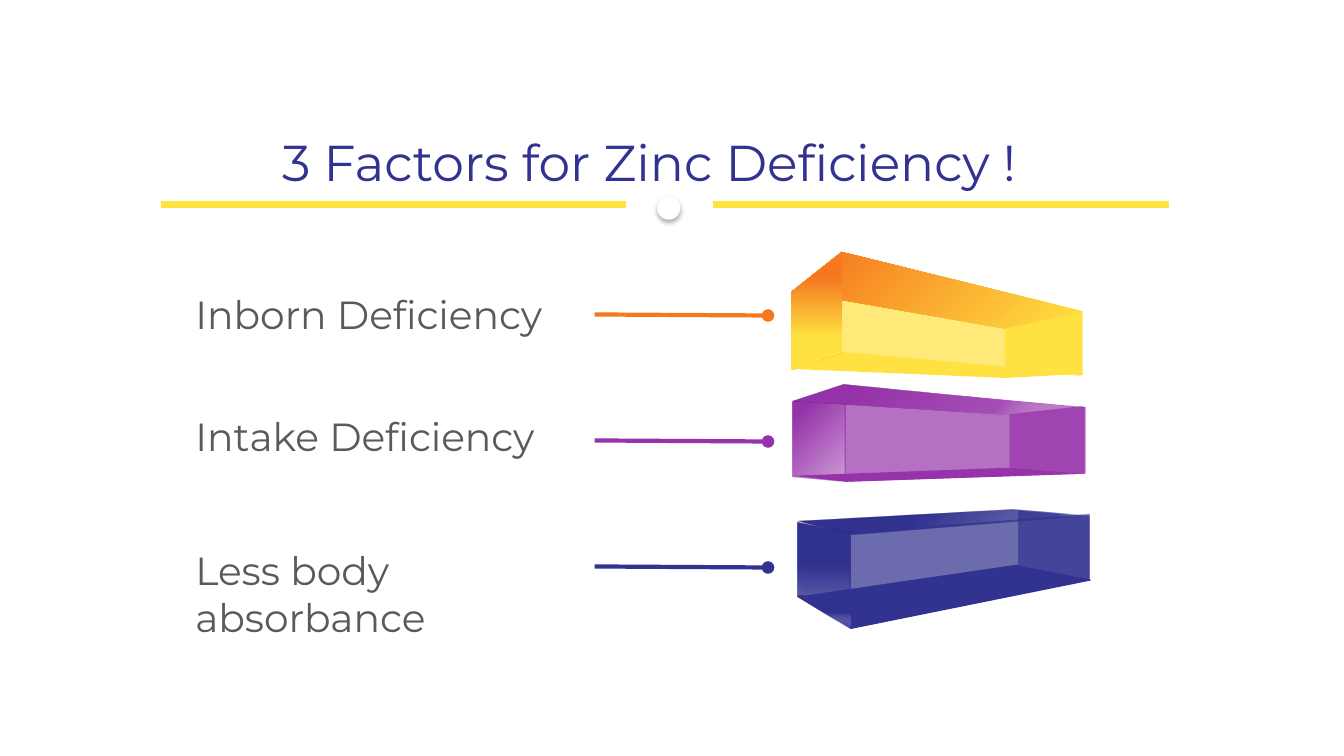
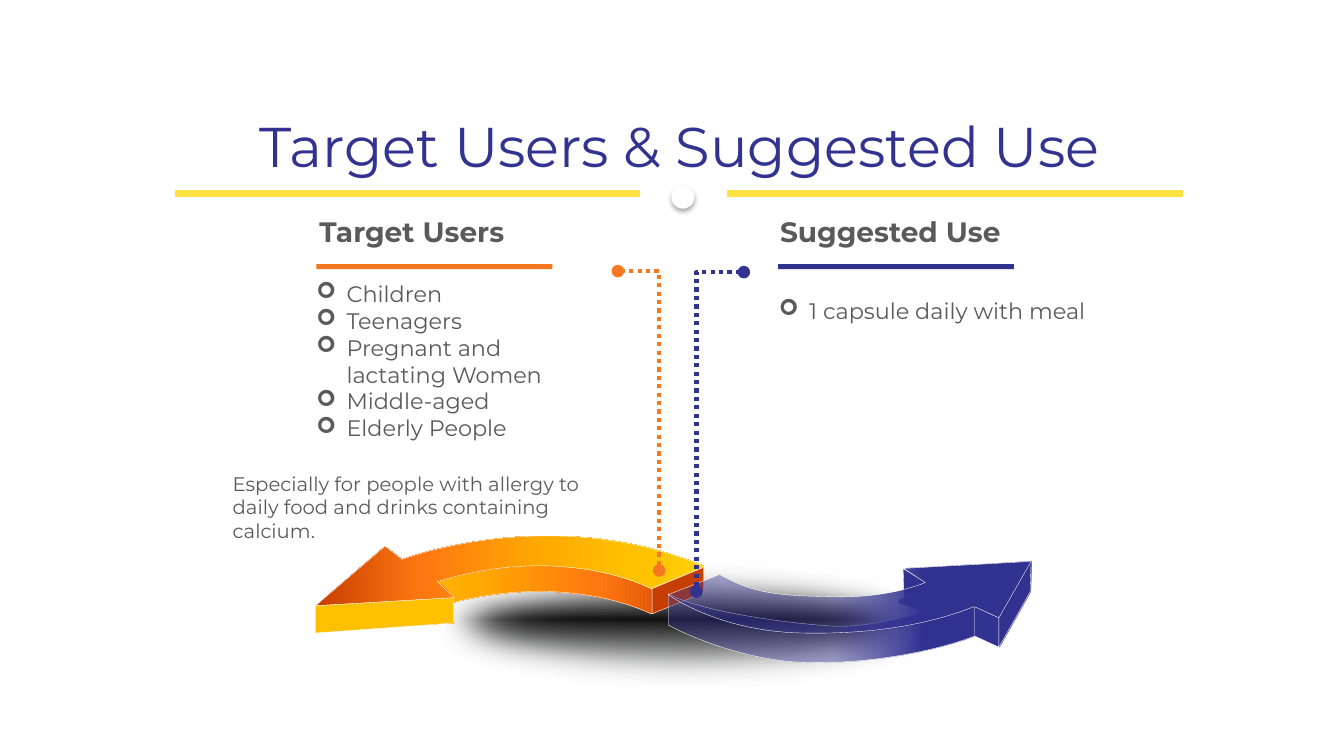
from dataclasses import dataclass
from itertools import pairwise

from pptx import Presentation
from pptx.dml.color import RGBColor
from pptx.enum.dml import MSO_LINE
from pptx.enum.shapes import MSO_CONNECTOR, MSO_SHAPE
from pptx.enum.text import MSO_AUTO_SIZE, PP_ALIGN
from pptx.oxml import parse_xml
from pptx.oxml.ns import nsdecls, qn
from pptx.oxml.xmlchemy import OxmlElement as new_element
from pptx.util import Inches, Pt

COLORS = {
    "yellow": "FFE241", "navy": "323291", "orange": "F57820", "purple": "9632AA",
    "text": "5A5A5A", "white": "FFFFFF", "pale": "F2F2F2", "black": "000000",
    "edge": "020202", "ink": "121212", "slate": "535455", "rust": "C73E01",
    "flame": "FF7711", "amber": "FFAA01", "gold": "FFC000", "lemon": "FECE02",
}


@dataclass
class Gradient:
    """Stops are (percent, colour, opacity percent)."""
    stops: list
    angle: int = 0
    kind: str = ""
    focus: tuple = (50, 50, 50, 50)


def color_xml(name, opacity=100):
    return (f'<a:srgbClr val="{COLORS[name]}">'
            f'<a:alpha val="{opacity * 1000}"/></a:srgbClr>')


def fill_xml(fill):
    if not isinstance(fill, Gradient):
        return f'<a:solidFill {nsdecls("a")}>{color_xml(*fill)}</a:solidFill>'
    stops = "".join(f'<a:gs pos="{place * 1000}">{color_xml(*color)}</a:gs>'
                    for place, *color in fill.stops)
    if fill.kind:
        sides = " ".join(f'{side}="{value * 1000}"'
                         for side, value in zip("ltrb", fill.focus))
        course = f'<a:path path="{fill.kind}"><a:fillToRect {sides}/></a:path>'
    else:
        course = f'<a:lin ang="{fill.angle * 60000}" scaled="0"/>'
    return (f'<a:gradFill {nsdecls("a")} rotWithShape="1">'
            f'<a:gsLst>{stops}</a:gsLst>{course}</a:gradFill>')


def flatten(points, steps=16):
    """Sample six-number points (cubic curves) to find the true extent."""
    result = [points[0]]
    for before, point in pairwise(points):
        if len(point) == 2:
            result.append(point)
            continue
        corners = [before[-2:], point[:2], point[2:4], point[4:]]
        for step in range(1, steps + 1):
            t = step / steps
            weights = ((1 - t) ** 3, 3 * t * (1 - t) ** 2, 3 * t * t * (1 - t), t ** 3)
            result.append(tuple(sum(weight * corner[axis]
                                    for weight, corner in zip(weights, corners))
                                for axis in (0, 1)))
    return result


def restore_curves(shape, points):
    """Write the outline of a sampled shape with real cubic curves."""
    outline = shape._element.spPr.find(".//" + qn("a:path"))
    for segment in list(outline)[1:-1]:
        outline.remove(segment)
    for index, point in enumerate(points[1:], start=1):
        segment = new_element("a:lnTo" if len(point) == 2 else "a:cubicBezTo")
        for x, y in zip(point[::2], point[1::2]):
            corner = new_element("a:pt")
            corner.set("x", str(Inches(x) - shape.left))
            corner.set("y", str(Inches(y) - shape.top))
            segment.append(corner)
        outline.insert(index, segment)


class Deck:
    FONT = "Montserrat"
    FRAME = {"word_wrap": True, "auto_size": MSO_AUTO_SIZE.SHAPE_TO_FIT_TEXT}
    INDENT = Inches(0.3)

    def __init__(self):
        self.presentation = Presentation()
        self.presentation.slide_width = Inches(7.5 * 16 / 9)
        self.presentation.slide_height = Inches(7.5)
        self.slide = None

    def new_slide(self):
        self.slide = self.presentation.slides.add_slide(self.presentation.slide_layouts[6])

    def style_line(self, line, color, width, ends=(), dash=None):
        line.color.rgb = RGBColor.from_string(COLORS[color])
        line.width = Pt(width)
        if dash:
            line.dash_style = dash
        for end in ends:
            tip = new_element(f"a:{end}")
            tip.set("type", "oval")
            line._get_or_add_ln().append(tip)

    def style_shape(self, shape, fill=None, line=None, shadow=None, soft_edge=0):
        shape.shadow.inherit = False
        properties = shape._element.spPr
        if fill:
            shape.fill.solid()
            properties.replace(properties.find(qn("a:solidFill")),
                               parse_xml(fill_xml(fill)))
        else:
            shape.fill.background()
        if line:
            self.style_line(shape.line, **line)
        else:
            shape.line.fill.background()
        effects = properties.find(qn("a:effectLst"))
        if shadow:
            color, opacity, blur, distance, angle = shadow
            effects.append(parse_xml(
                f'<a:outerShdw {nsdecls("a")} blurRad="{Pt(blur)}" dist="{Pt(distance)}" '
                f'dir="{angle * 60000}" algn="ctr" rotWithShape="0">'
                f'{color_xml(color, opacity)}</a:outerShdw>'))
        if soft_edge:
            effects.append(parse_xml(
                f'<a:softEdge {nsdecls("a")} rad="{Pt(soft_edge)}"/>'))

    def preset(self, kind, box, **style):
        shape = self.slide.shapes.add_shape(kind, *map(Inches, box))
        self.style_shape(shape, **style)

    def outline(self, points, close=True, **style):
        start, *rest = [(Inches(x), Inches(y)) for x, y in flatten(points)]
        builder = self.slide.shapes.build_freeform(*start, scale=1.0)
        builder.add_line_segments(rest, close=close)
        shape = builder.convert_to_shape()
        if any(len(point) == 6 for point in points):
            restore_curves(shape, points)
        self.style_shape(shape, **style)

    def line(self, start, end, color, width, ends=()):
        connector = self.slide.shapes.add_connector(
            MSO_CONNECTOR.STRAIGHT, *map(Inches, (*start, *end)))
        self.style_line(connector.line, color, width, ends)
        connector._element.spPr.append(new_element("a:effectLst"))

    def text(self, box, lines, size, color="text", bold=False, align=PP_ALIGN.LEFT,
             bullet=None):
        frame = self.slide.shapes.add_textbox(*map(Inches, box)).text_frame
        for name, value in self.FRAME.items():
            setattr(frame, name, value)
        font_format = {"name": self.FONT, "size": Pt(size), "bold": bold}
        for index, line in enumerate(lines):
            paragraph = frame.add_paragraph() if index else frame.paragraphs[0]
            paragraph.alignment = align
            if bullet:
                properties = paragraph._p.get_or_add_pPr()
                properties.set("marL", str(self.INDENT))
                properties.set("indent", str(-self.INDENT))
                for tag, key, value in (("a:buFont", "typeface", "Wingdings"),
                                        ("a:buChar", "char", bullet)):
                    mark = new_element(tag)
                    mark.set(key, value)
                    properties.append(mark)
            run = paragraph.add_run()
            run.text = line
            for name, value in font_format.items():
                setattr(run.font, name, value)
            run.font.color.rgb = RGBColor.from_string(COLORS[color])

    def header(self, title, box, size, left, top, align=PP_ALIGN.LEFT):
        """Title over a yellow rule that is broken by a white ball."""
        for start, end in ((0, 4.61), (5.47, 10)):
            self.line((left + start, top), (left + end, top), "yellow", 4.5)
        self.preset(MSO_SHAPE.OVAL, (left + 4.92, top - 0.08, 0.23, 0.23),
                    fill=("white",), shadow=("black", 32, 3.5, 2.2, 90))
        self.text(box, [title], size, "navy", align=align)

    def faces(self, faces, **style):
        for fill, points in faces:
            self.outline(points, fill=fill, **style)


def fading(color, solid, thin, opacity, angle):
    return Gradient([(solid, color), (thin, color, opacity), (100, "white", 0)], angle)


def factors_slide(deck):
    deck.new_slide()
    deck.header("3 Factors for Zinc Deficiency !", (2.7, 1.25, 8.52, 0.71), 36, 1.6, 2.03)

    # Navy, purple and yellow glass boxes, faces from back to front
    deck.faces([
        (("navy",), [(10.05, 5.6), (7.91, 5.91), (7.91, 5.92), (8.44, 6.24),
                     (10.82, 5.76), (10.82, 5.75)]),
        (("navy", 70), [(10.81, 5.75), (10.81, 5.12), (10.03, 5.06), (10.03, 5.6)]),
        (("pale",), [(10.1, 5.6), (10.1, 5.06), (7.97, 5.18), (7.97, 5.91)]),
        (fading("navy", 39, 84, 70, 45),
         [(10.05, 5.06), (7.91, 5.17), (8.44, 5.3), (10.82, 5.12)]),
        (("navy", 70), [(8.43, 6.24), (10.81, 5.75), (10.81, 5.1), (8.43, 5.28)]),
        (fading("navy", 39, 84, 70, 90),
         [(7.91, 5.18), (7.91, 5.92), (8.44, 6.25), (8.44, 5.29)]),
    ])
    deck.faces([
        (fading("purple", 21, 93, 52, 45),
         [(8.38, 3.83), (7.86, 3.99), (7.86, 4.73), (8.39, 4.78), (8.39, 3.83)]),
        (("purple", 70), [(10.76, 4.04), (8.38, 3.82), (8.38, 4.78), (10.76, 4.7)]),
        (fading("purple", 20, 72, 52, 45),
         [(10.01, 4.11), (10.71, 4.04), (8.37, 3.82), (7.86, 3.98), (10, 4.11)]),
        (("purple", 70), [(10.77, 4.04), (10.73, 4.03), (10.02, 4.11), (10.02, 4.64),
                          (10.76, 4.7), (10.77, 4.7)]),
        (("edge",), [(10.02, 4.64), (10.02, 4.64), (10.02, 4.11)]),
        (("purple",), [(7.87, 4.72), (8.39, 4.78), (10.76, 4.7), (10.02, 4.64)]),
    ])
    deck.faces([
        (("yellow", 70), [(8.32, 2.53), (8.32, 3.51), (10.72, 3.73), (10.72, 3.12)]),
        (Gradient([(0, "yellow"), (7, "orange"), (100, "yellow")],
                  kind="circle", focus=(0, 0, 100, 100)),
         [(9.98, 3.26), (10.74, 3.1), (10.74, 3.09), (8.35, 2.5), (7.86, 2.89),
          (9.97, 3.26)]),
        (("yellow",), [(10.74, 3.1), (9.97, 3.26), (9.97, 3.64), (10.74, 3.72)]),
        (("yellow",), [(7.85, 3.66), (8.35, 3.49), (9.99, 3.64), (10.72, 3.71),
                       (9.98, 3.75)]),
        (Gradient([(20, "orange"), (72, "yellow"), (100, "yellow")], 90),
         [(7.85, 2.9), (7.85, 3.67), (8.35, 3.5), (8.35, 2.52)]),
    ])

    # Labels and their pointers
    factors = [("Inborn Deficiency", 2.83, 0.57, "orange"),
               ("Intake Deficiency", 4.04, 0.57, "purple"),
               ("Less body absorbance", 5.37, 1.04, "navy")]
    for row, (label, top, height, color) in enumerate(factors):
        deck.text((1.84, top, 4.06, height), [label], 28)
        level = 3.12 + 1.25 * row
        deck.line((5.9, level), (7.62, level + 0.01), color, 3, ["tailEnd"])


def users_slide(deck):
    deck.new_slide()
    deck.header("Target Users & Suggested Use", (1.74, 1.06, 10, 0.77), 40, 1.74, 1.92,
                PP_ALIGN.CENTER)

    # Ground shadow
    deck.preset(MSO_SHAPE.OVAL, (3.87, 5.43, 5.71, 1.42),
                fill=Gradient([(0, "ink"), (100, "white", 0)], kind="shape"),
                shadow=("slate", 100, 0, 8.5, 45), soft_edge=25)

    # Curved arrows: orange to the left, navy to the right
    fire = [(0, "rust"), (27, "flame"), (59, "amber"), (80, "gold"), (100, "lemon")]
    glass = Gradient([(45, "navy", 41), (70, "navy")])
    deck.faces([
        (Gradient(fire, 180),
         [(6.99, 5.87), (6.46, 6.09), (6.46, 6.09, 5.61, 5.64, 4.34, 6.02),
          (4.4, 6.07, 4.46, 6.12, 4.51, 6.18), (3.14, 6.26, 3.38, 6.25, 3.14, 6.26),
          (3.12, 6.27, 3.14, 6.01, 3.14, 6.01), (3.44, 5.97, 3.35, 5.82, 3.99, 5.8),
          (4.63, 5.78, 5.48, 5.23, 6.99, 5.87)]),
        (Gradient(fire),
         [(6.99, 5.62), (6.46, 5.84), (6.46, 5.84, 5.61, 5.38, 4.34, 5.77),
          (4.51, 5.93), (3.13, 6.01), (3.82, 5.42), (3.99, 5.55),
          (3.99, 5.55, 5.48, 4.98, 6.99, 5.62)]),
        (("gold",), [(4.5, 5.93), (4.5, 6.18), (3.13, 6.28), (3.13, 6.01)]),
        (("rust",), [(6.47, 5.84), (6.47, 6.09), (6.98, 5.88), (6.98, 5.63)]),
        (("navy",), [(8.96, 5.64), (8.97, 5.98), (9.21, 6.11), (9.2, 5.78)]),
        (glass,
         [(6.63, 5.89), (6.63, 6.2), (6.64, 6.21, 7.24, 6.53, 7.93, 6.57),
          (8.61, 6.6, 9.31, 6.45, 9.67, 6.31), (9.75, 6.34, 9.91, 6.43, 9.91, 6.42),
          (9.91, 6.42, 10.1, 6.09, 10.22, 5.87), (10.22, 5.87, 10.23, 5.56, 10.23, 5.57),
          (9.8, 5.69, 9.13, 5.85, 8.96, 5.93), (8.78, 6.01, 9.11, 6.02, 9.18, 6.06),
          (9.18, 6.06, 8.65, 6.24, 8.23, 6.21), (7.8, 6.18, 6.95, 6.07, 6.63, 5.89)]),
        (glass,
         [(7.14, 5.7), (6.63, 5.9), (6.63, 5.9, 7.12, 6.26, 7.94, 6.28),
          (8.76, 6.3, 9.31, 6.16, 9.66, 6.02), (9.91, 6.13), (10.23, 5.57),
          (8.96, 5.64), (9.18, 5.78), (9.18, 5.78, 8.82, 5.94, 8.24, 5.92),
          (7.65, 5.91, 7.45, 5.87, 7.14, 5.7)]),
        (("navy",), [(9.67, 6.02), (9.67, 6.31), (9.91, 6.42), (9.91, 6.13)]),
    ], line={"color": "white", "width": 0.25})

    # Dotted leaders
    for color, points in (("orange", [(6.54, 5.66), (6.54, 2.69), (6.13, 2.69)]),
                          ("navy", [(6.91, 5.87), (6.91, 2.7), (7.38, 2.7)])):
        deck.outline(points, close=False, line={
            "color": color, "width": 3, "dash": MSO_LINE.ROUND_DOT,
            "ends": ["headEnd", "tailEnd"]})

    # Two columns: heading, rule and list
    columns = [
        ("Target Users", "orange", (3.07, 2.08, 2.85, 0.44), 3.14, (3.04, 2.73, 2.73, 1.72),
         ["Children", "Teenagers", "Pregnant and lactating Women", "Middle-aged",
          "Elderly People"]),
        ("Suggested Use", "navy", (7.64, 2.08, 2.69, 0.44), 7.72, (7.63, 2.9, 3.8, 0.37),
         ["1 capsule daily with meal"]),
    ]
    for heading, color, heading_box, rule_left, list_box, items in columns:
        deck.text(list_box, items, 16, bullet="➢")
        deck.preset(MSO_SHAPE.RECTANGLE, (rule_left, 2.62, 2.34, 0.05), fill=(color,))
        deck.text(heading_box, [heading], 20, bold=True)

    deck.text((2.21, 4.63, 4.14, 0.81),
              ["Especially for people with allergy to daily food and drinks "
               "containing calcium."], 14)


def main():
    deck = Deck()
    factors_slide(deck)
    users_slide(deck)
    deck.presentation.save("out.pptx")


if __name__ == "__main__":
    main()
